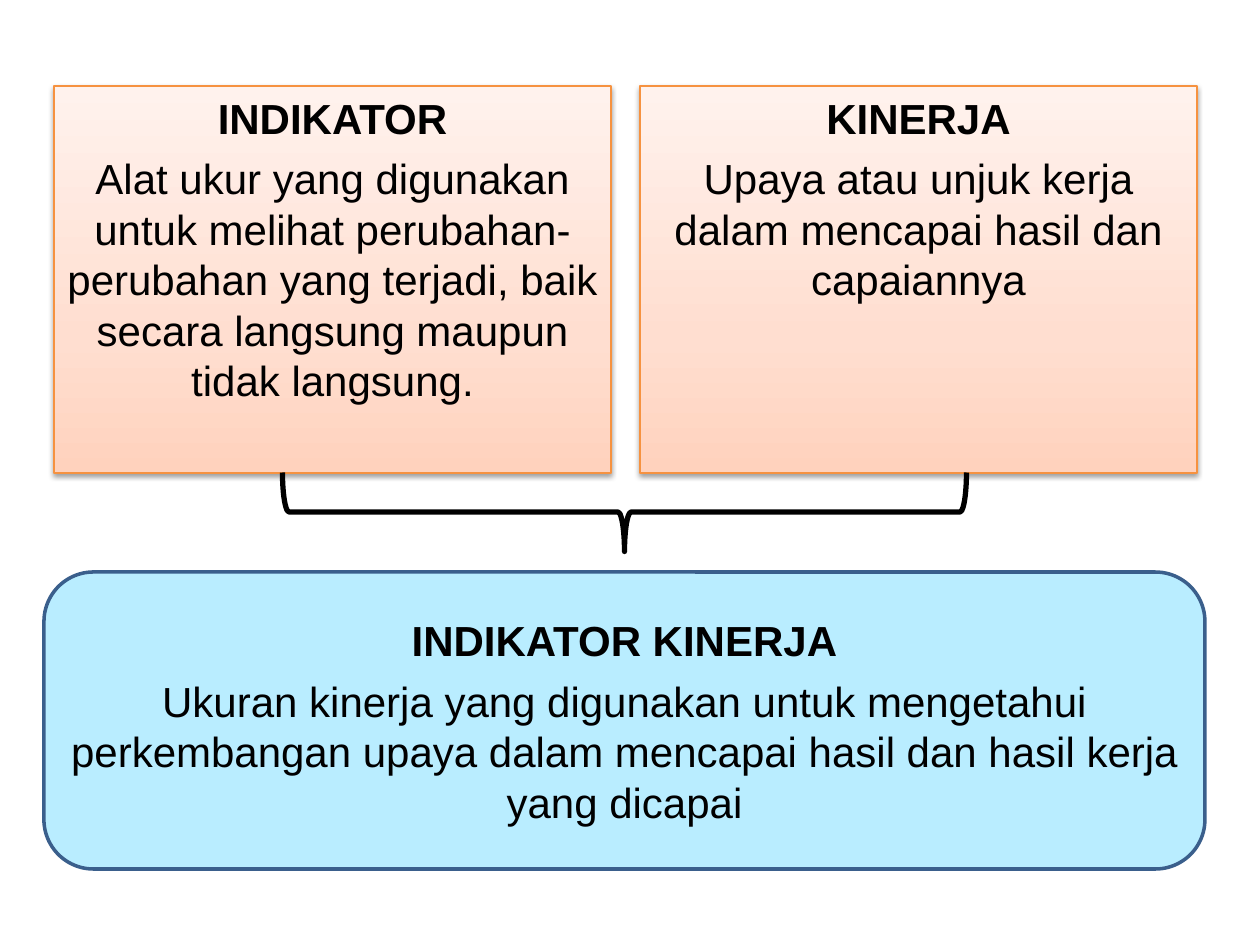
from copy import deepcopy
from dataclasses import dataclass

from lxml import etree
from pptx import Presentation
from pptx.dml.color import RGBColor
from pptx.enum.shapes import MSO_SHAPE
from pptx.enum.text import MSO_ANCHOR, PP_ALIGN
from pptx.oxml.ns import qn
from pptx.util import Emu, Pt

RECT = MSO_SHAPE.RECTANGLE
ROUNDED = MSO_SHAPE.ROUNDED_RECTANGLE
BRACE = MSO_SHAPE.RIGHT_BRACE
TOP, MIDDLE = MSO_ANCHOR.TOP, MSO_ANCHOR.MIDDLE
CENTER = PP_ALIGN.CENTER

PX_PER_INCH = 126
FONT, FONT_SIZE = "Arial", 24
PEACH_STOPS = [(0, "FFD2BD"), (0.35, "FFDED0"), (1, "FFF2ED")]


@dataclass
class Card:
    left: int
    top: int
    width: int
    height: int
    title: str
    body: str
    line: str
    line_pt: float
    gap_pt: float


TERMS = [
    Card(54 + i * 586, 86, 557, 387, title, body, "F69240", 0.75, 5.8)
    for i, (title, body) in enumerate([
        ("INDIKATOR", "Alat ukur yang digunakan untuk melihat perubahan-perubahan "
                      "yang terjadi, baik secara langsung maupun tidak langsung."),
        ("KINERJA", "Upaya atau unjuk kerja dalam mencapai hasil dan capaiannya"),
    ])
]
RESULT = Card(44, 572, 1161, 297, "INDIKATOR KINERJA",
              "Ukuran kinerja yang digunakan untuk mengetahui perkembangan upaya "
              "dalam mencapai hasil dan hasil kerja yang dicapai", "3A5F8C", 2, 6)


def px(n: int) -> Emu:
    return Emu(round(n * 914400 / PX_PER_INCH))


def rgb(value: str) -> RGBColor:
    return RGBColor.from_string(value)


def add_outlined(slide, kind, left: int, top: int, width: int, height: int,
                 line: str, line_pt: float):
    sp = slide.shapes.add_shape(kind, px(left), px(top), px(width), px(height))
    sp.shadow.inherit = False
    sp.line.color.rgb = rgb(line)
    sp.line.width = Pt(line_pt)
    return sp


def fill_peach(sp) -> None:
    """Fill with the three-stop gradient, darkest at the bottom."""
    sp.fill.gradient()
    sp.fill.gradient_angle = 90
    first = sp._element.spPr.find(".//" + qn("a:gs"))
    first.addnext(deepcopy(first))
    for stop, (position, color) in zip(sp.fill.gradient_stops, PEACH_STOPS):
        stop.position = position
        stop.color.rgb = rgb(color)


def add_soft_shadow(sp) -> None:
    effects = sp._element.spPr.find(qn("a:effectLst"))
    shadow = etree.SubElement(effects, qn("a:outerShdw"), blurRad=str(Pt(3.1)),
                              dist=str(Pt(1.6)), dir="5400000", rotWithShape="0")
    color = etree.SubElement(shadow, qn("a:srgbClr"), val="000000")
    etree.SubElement(color, qn("a:alpha"), val="38000")


def add_card(slide, card: Card, kind, anchor):
    sp = add_outlined(slide, kind, card.left, card.top, card.width, card.height,
                      card.line, card.line_pt)
    tf = sp.text_frame
    tf.word_wrap = True
    tf.vertical_anchor = anchor
    tf.text = f"{card.title}\n{card.body}"
    for i, p in enumerate(tf.paragraphs):
        p.alignment = CENTER
        p.space_before = Pt(card.gap_pt if i else 0)
        font = p.runs[0].font
        font.name, font.size, font.bold = FONT, Pt(FONT_SIZE), i == 0
        font.color.rgb = rgb("000000")
    return sp


def main() -> None:
    prs = Presentation()
    prs.slide_width, prs.slide_height = px(1260), px(945)
    slide = prs.slides.add_slide(prs.slide_layouts[6])

    for term in TERMS:
        sp = add_card(slide, term, RECT, TOP)
        fill_peach(sp)
        add_soft_shadow(sp)

    sp = add_card(slide, RESULT, ROUNDED, MIDDLE)
    sp.fill.solid()
    sp.fill.fore_color.rgb = rgb("B9EDFF")

    brace = add_outlined(slide, BRACE, 585, 170, 79, 684, "000000", 3)
    brace.fill.background()
    brace.rotation = 90

    prs.save("out.pptx")


if __name__ == "__main__":
    main()
